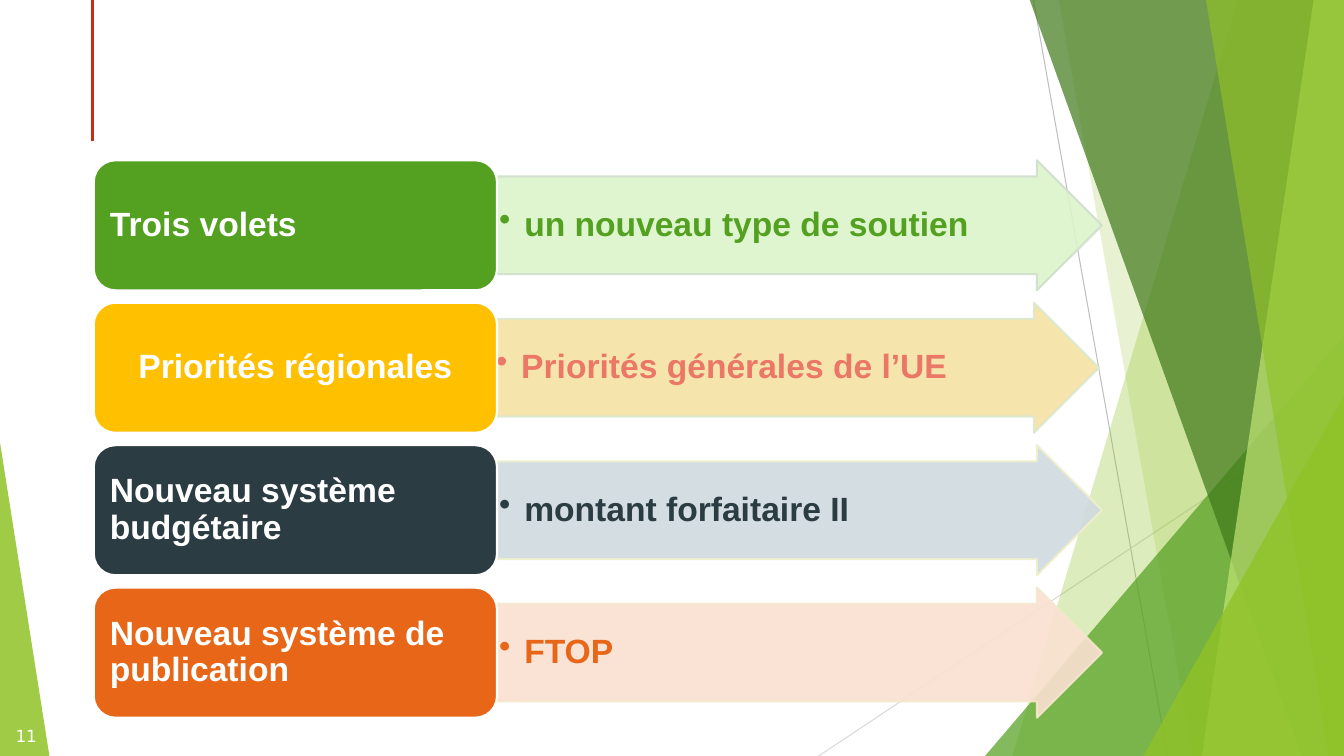
from dataclasses import dataclass

from lxml.etree import SubElement
from pptx import Presentation
from pptx.dml.color import RGBColor
from pptx.enum.shapes import MSO_CONNECTOR as Connector, MSO_SHAPE as Preset
from pptx.enum.text import MSO_ANCHOR as Anchor, PP_ALIGN as Align
from pptx.oxml.ns import qn
from pptx.util import Inches, Pt

COLORS = {
    "white": "FFFFFF", "lime": "90C226", "green": "54A021", "forest": "3F7819",
    "pale_lime": "C0E474", "gray": "BFBFBF", "light_gray": "D9D9D9", "red": "C42F1A",
    "amber": "FFC000", "slate": "2C3C43", "orange": "E76618", "coral": "EB7766",
    "green_tint": "DBF4CA", "green_edge": "D1DFCD",
    "amber_tint": "F5E3A5", "amber_edge": "DCE8CC",
    "slate_tint": "CFDADF", "slate_edge": "EEEFCC",
    "orange_tint": "FAE0D1", "orange_edge": "F5E7CD",
}
WIDTH, HEIGHT = 13.33, 7.5


@dataclass
class Band:
    """Facet reaching the right edge of the slide, with a slanted left side."""
    top_x: float
    bottom_x: float
    color: str
    opacity: int


@dataclass
class Corner:
    """Triangle standing on the bottom edge of the slide."""
    left: float
    top: float
    width: float
    apex: float
    color: str
    opacity: int


@dataclass
class Theme:
    """One row: a heading box and the arrow that explains it."""
    heading: str
    detail: str
    color: str
    tint: str
    edge: str
    detail_color: str
    heading_align: Align = Align.LEFT
    arrow_left: float = 4.93


FACETS = [
    Band(12.28, 10.04, "lime", 30),
    Band(10.5, 11.83, "lime", 20),
    Corner(9.77, 3.33, 3.56, 1, "green", 72),
    Band(10.21, 12.91, "forest", 70),
    Band(13.03, 11.92, "pale_lime", 70),
    Band(11.96, 13.18, "lime", 65),
    Corner(11.34, 3.93, 1.99, 1, "lime", 80),
    Corner(0, 4.39, 0.49, 0, "lime", 85),
]
THEMES = [
    Theme("Trois volets", "un nouveau type de soutien",
          "green", "green_tint", "green_edge", "green"),
    Theme("Priorités régionales", "Priorités générales de l’UE",
          "amber", "amber_tint", "amber_edge", "coral", Align.CENTER, 4.9),
    Theme("Nouveau système budgétaire", "montant forfaitaire II",
          "slate", "slate_tint", "slate_edge", "slate"),
    Theme("Nouveau système de publication", "FTOP",
          "orange", "orange_tint", "orange_edge", "orange"),
]
FIRST_TOP, LAST_TOP, ROW_HEIGHT = 1.59, 5.83, 1.29
PITCH = (LAST_TOP - FIRST_TOP) / (len(THEMES) - 1)


def rgb(name: str) -> RGBColor:
    return RGBColor.from_string(COLORS[name])


def set_opacity(fill_parent, percent: int) -> None:
    for color in fill_parent.iter(qn("a:srgbClr")):
        SubElement(color, qn("a:alpha"), val=str(percent * 1000))


def style(shape, fill: str, edge: str = "", opacity: int = 100) -> None:
    shape.shadow.inherit = False
    shape.fill.solid()
    shape.fill.fore_color.rgb = rgb(fill)
    if edge:
        shape.line.color.rgb = rgb(edge)
        shape.line.width = Pt(1.5)
    else:
        shape.line.fill.background()
    if opacity < 100:
        set_opacity(shape._element.spPr, opacity)


def add_preset(slide, preset: Preset, left: float, top: float, width: float, height: float):
    return slide.shapes.add_shape(
        preset, Inches(left), Inches(top), Inches(width), Inches(height))


def add_line(slide, start: tuple, end: tuple, color: str, width: float) -> None:
    line = slide.shapes.add_connector(
        Connector.STRAIGHT, *(Inches(value) for value in start + end))
    line.line.color.rgb = rgb(color)
    line.line.width = Pt(width)
    SubElement(line._element.spPr, qn("a:effectLst"))


def add_facet(slide, facet) -> None:
    if isinstance(facet, Band):
        outline = slide.shapes.build_freeform(
            Inches(facet.top_x), Inches(-0.01))
        corners = [(WIDTH, -0.01), (WIDTH, HEIGHT), (facet.bottom_x, HEIGHT)]
        outline.add_line_segments([(Inches(x), Inches(y)) for x, y in corners])
        shape = outline.convert_to_shape()
    else:
        shape = add_preset(slide, Preset.ISOSCELES_TRIANGLE, facet.left, facet.top,
                           facet.width, HEIGHT - facet.top)
        shape.adjustments[0] = facet.apex
    style(shape, facet.color, opacity=facet.opacity)


def write(shape, text: str, *, color: str = "white", size: float = 24, font: str = "Arial",
          bold: bool = True, align: Align = Align.LEFT, spacing: float = 0.9,
          bullet: bool = False) -> None:
    frame = shape.text_frame
    frame.word_wrap = True
    frame.vertical_anchor = Anchor.MIDDLE
    paragraph = frame.paragraphs[0]
    paragraph.text = text
    paragraph.alignment = align
    paragraph.line_spacing = spacing
    if bullet:
        frame.margin_left = frame.margin_right = Inches(0.02)
        frame.margin_top = frame.margin_bottom = Inches(0.02)
        paragraph.level = 1
        properties = paragraph._p.get_or_add_pPr()
        properties.set("marL", str(Inches(0.25)))
        properties.set("indent", str(Inches(-0.25)))
        SubElement(properties, qn("a:buChar"), char="•")
    run_font = paragraph.runs[0].font
    run_font.name, run_font.size, run_font.bold = font, Pt(size), bold
    run_font.color.rgb = rgb(color)


def add_theme(slide, theme: Theme, top: float) -> None:
    arrow = add_preset(slide, Preset.RIGHT_ARROW, theme.arrow_left, top, 6, ROW_HEIGHT)
    arrow.adjustments[0], arrow.adjustments[1] = 0.75, 0.5
    style(arrow, theme.tint, theme.edge, 90)
    write(arrow, theme.detail, color=theme.detail_color, bullet=True)

    box = add_preset(slide, Preset.ROUNDED_RECTANGLE, 0.93, top, 4, ROW_HEIGHT)
    style(box, theme.color, "white")
    write(box, theme.heading, align=theme.heading_align)


def main() -> None:
    deck = Presentation()
    deck.slide_width, deck.slide_height = Inches(WIDTH), Inches(HEIGHT)
    slide = deck.slides.add_slide(deck.slide_layouts[6])

    # Background facets and accent line
    add_line(slide, (10.25, 0), (11.58, HEIGHT), "gray", 0.75)
    add_line(slide, (WIDTH, 4.03), (8.12, HEIGHT), "light_gray", 0.75)
    for facet in FACETS:
        add_facet(slide, facet)
    add_line(slide, (0.92, 0), (0.92, 1.4), "red", 2.25)

    # Theme rows
    for row, theme in enumerate(THEMES):
        add_theme(slide, theme, FIRST_TOP + row * PITCH)

    # Slide number
    number = slide.shapes.add_textbox(Inches(0), Inches(7.1), Inches(0.52), Inches(0.4))
    write(number, "11", size=12, font="DejaVu Sans", bold=False,
          align=Align.CENTER, spacing=1.0)

    deck.save("out.pptx")


if __name__ == "__main__":
    main()
